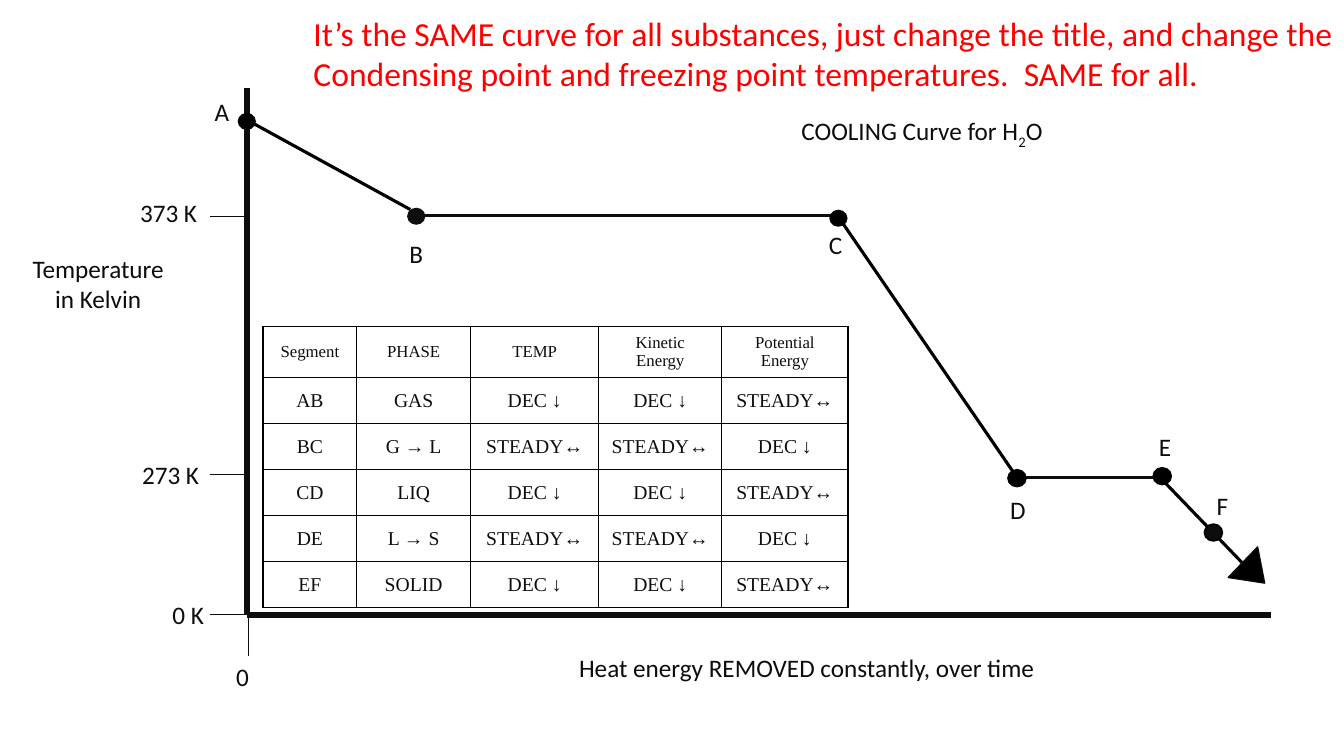
"""Build a slide with the cooling curve of water and its table of segments."""
from dataclasses import dataclass

import lxml.etree
import pptx
import pptx.dml.color
import pptx.enum.shapes
import pptx.enum.text
import pptx.oxml.ns
import pptx.util

Cm = pptx.util.Cm
Pt = pptx.util.Pt
ALIGN = pptx.enum.text.PP_ALIGN
SHAPE = pptx.enum.shapes.MSO_SHAPE

INK = pptx.dml.color.RGBColor(0x0D, 0x0D, 0x0D)
BLACK = pptx.dml.color.RGBColor(0, 0, 0)
RED = pptx.dml.color.RGBColor(0xFF, 0, 0)

AXIS_X, AXIS_TOP, AXIS_RIGHT, BASELINE = 6.22, 2.21, 32.03, 15.49
TICK_LEFT = 5.28
LABEL_WIDTH, LABEL_HEIGHT = 2.03, 1.02
DOT_WIDTH, DOT_HEIGHT = 0.46, 0.43


@dataclass(frozen=True)
class Label:
    text: str
    left: float
    top: float
    width: float = LABEL_WIDTH
    height: float = LABEL_HEIGHT
    align: ALIGN = ALIGN.CENTER
    size: float = 18
    color: pptx.dml.color.RGBColor = INK


@dataclass(frozen=True)
class Stroke:
    x1: float
    y1: float
    x2: float
    y2: float
    weight: float
    color: pptx.dml.color.RGBColor = INK


@dataclass(frozen=True)
class Point:
    name: str
    x: float
    y: float
    label_x: float
    label_top: float
    color: pptx.dml.color.RGBColor = BLACK
    outlined: bool = False


LABELS = [
    Label("Temperature in Kelvin", 0.48, 6.25, 3.99, 1.8),
    Label("Heat energy REMOVED constantly, over time", 13.89, 16.31, 12.88),
    Label("373 K", 3.28, 4.85, align=ALIGN.LEFT),
    Label("273 K", 3.33, 11.46, align=ALIGN.LEFT),
    Label("0 K", 3.73, 14.99),
    Label("0", 5.33, 16.54, 1.57),
    Label("It’s the SAME curve for all substances, just change the title, and change the "
          "Condensing point and freezing point temperatures.  SAME for all.",
          7.65, 0.2, 26.21, 2.31, ALIGN.LEFT, 24, RED),
]

AXES = [
    Stroke(AXIS_X, AXIS_TOP, AXIS_X, BASELINE, 4.5),
    Stroke(AXIS_RIGHT, BASELINE, AXIS_X, BASELINE, 4.5),
    Stroke(6.25, 16.54, 6.25, BASELINE, 0.5),
]
TICKS = [Stroke(TICK_LEFT, y, AXIS_X, y, 0.5) for y in (5.44, 11.96, BASELINE)]
SEGMENTS = [
    Stroke(AXIS_X, 3.02, 10.34, 5.28, 2.25, BLACK),
    Stroke(10.64, 5.44, 21.06, 5.44, 2.25),
    Stroke(21.18, 5.54, 25.58, 11.96, 2.25, BLACK),
    Stroke(25.86, 12.04, 29.34, 12.04, 2.25),
    Stroke(29.29, 12.09, 31.37, 14.25, 2.25, BLACK),
]
POINTS = [
    Point("A", AXIS_X, 3.06, 5.59, 2.31),
    Point("B", 10.49, 5.45, 10.49, 5.87, INK),
    Point("C", 21.13, 5.5, 21.06, 5.66),
    Point("D", 25.63, 12.05, 25.65, 12.32, outlined=True),
    Point("E", 29.29, 12.0, 29.36, 10.74, outlined=True),
    Point("F", 30.58, 13.42, 30.81, 12.22, INK, True),
]

FALLING, STEADY = "DEC ↓", "STEADY↔"
COOLING = (FALLING, FALLING, STEADY)
CHANGING = (STEADY, STEADY, FALLING)
ROWS = [
    ("Segment", "PHASE", "TEMP", "Kinetic\nEnergy", "Potential\nEnergy"),
    ("AB", "GAS", *COOLING),
    ("BC", "G → L", *CHANGING),
    ("CD", "LIQ", *COOLING),
    ("DE", "L → S", *CHANGING),
    ("EF", "SOLID", *COOLING),
]
COLUMN_WIDTHS = (2.36, 2.87, 3.23, 3.1, 3.18)
HEADER_HEIGHT, ROW_HEIGHT = 1.28, 1.16


def style(paragraph, align: ALIGN, size: float, color, font: str = "Calibri") -> None:
    paragraph.alignment = align
    paragraph.font.size = Pt(size)
    paragraph.font.name = font
    paragraph.font.color.rgb = color


def draw_label(slide, label: Label) -> None:
    box = slide.shapes.add_textbox(Cm(label.left), Cm(label.top), Cm(label.width), Cm(label.height))
    box.text_frame.word_wrap = True
    paragraph = box.text_frame.paragraphs[0]
    paragraph.text = label.text
    style(paragraph, label.align, label.size, label.color)


def draw_stroke(slide, stroke: Stroke) -> None:
    line = slide.shapes.add_connector(
        pptx.enum.shapes.MSO_CONNECTOR.STRAIGHT,
        Cm(stroke.x1), Cm(stroke.y1), Cm(stroke.x2), Cm(stroke.y2))
    line.line.width = Pt(stroke.weight)
    line.line.color.rgb = stroke.color
    lxml.etree.SubElement(line._element.spPr, pptx.oxml.ns.qn("a:effectLst"))


def draw_solid(slide, kind: SHAPE, left: float, top: float, width: float, height: float,
               fill, outline=None):
    solid = slide.shapes.add_shape(kind, Cm(left), Cm(top), Cm(width), Cm(height))
    solid.shadow.inherit = False
    solid.fill.solid()
    solid.fill.fore_color.rgb = fill
    if outline is None:
        solid.line.fill.background()
    else:
        solid.line.color.rgb = outline
        solid.line.width = Pt(1)
    return solid


def draw_point(slide, point: Point) -> None:
    draw_solid(slide, SHAPE.OVAL, point.x - DOT_WIDTH / 2, point.y - DOT_HEIGHT / 2,
               DOT_WIDTH, DOT_HEIGHT, point.color, BLACK if point.outlined else None)
    draw_label(slide, Label(point.name, point.label_x - LABEL_WIDTH / 2, point.label_top))


def draw_title(slide) -> None:
    title = slide.shapes.title
    title.left, title.top, title.width, title.height = Cm(19.69), Cm(2.79), Cm(7.09), Cm(1.02)
    title.text_frame.auto_size = pptx.enum.text.MSO_AUTO_SIZE.NONE
    title.text_frame.vertical_anchor = pptx.enum.text.MSO_ANCHOR.TOP
    paragraph = title.text_frame.paragraphs[0]
    for text in ("COOLING Curve for H", "2", "O"):
        run = paragraph.add_run()
        run.text = text
        if text == "2":
            run._r.get_or_add_rPr().set("baseline", "-25000")
    style(paragraph, ALIGN.CENTER, 18, INK)


def add_borders(cell) -> None:
    properties = cell._tc.get_or_add_tcPr()
    for side in ("lnL", "lnR", "lnT", "lnB"):
        border = lxml.etree.SubElement(properties, pptx.oxml.ns.qn(f"a:{side}"), w=str(Pt(1)))
        fill = lxml.etree.SubElement(border, pptx.oxml.ns.qn("a:solidFill"))
        lxml.etree.SubElement(fill, pptx.oxml.ns.qn("a:srgbClr"), val=str(BLACK))


def draw_table(slide) -> None:
    heights = [HEADER_HEIGHT] + [ROW_HEIGHT] * (len(ROWS) - 1)
    table = slide.shapes.add_table(len(ROWS), len(COLUMN_WIDTHS), Cm(6.63), Cm(8.23),
                                   Cm(sum(COLUMN_WIDTHS)), Cm(sum(heights))).table
    table.first_row = table.horz_banding = False
    for column, width in zip(table.columns, COLUMN_WIDTHS):
        column.width = Cm(width)
    for r, (texts, height) in enumerate(zip(ROWS, heights)):
        table.rows[r].height = Cm(height)
        for c, text in enumerate(texts):
            cell = table.cell(r, c)
            cell.vertical_anchor = pptx.enum.text.MSO_ANCHOR.MIDDLE
            cell.margin_left = cell.margin_right = Cm(0.15)
            add_borders(cell)
            cell.fill.background()
            paragraph = cell.text_frame.paragraphs[0]
            paragraph.text = text.replace("\n", "\v")
            style(paragraph, ALIGN.CENTER, 14 if r else 12, INK, "Times New Roman")


def main() -> None:
    deck = pptx.Presentation()
    deck.slide_width, deck.slide_height = Cm(33.87), Cm(19.05)
    slide = deck.slides.add_slide(deck.slide_layouts[5])
    draw_title(slide)
    for stroke in AXES + TICKS:
        draw_stroke(slide, stroke)
    for label in LABELS:
        draw_label(slide, label)
    draw_table(slide)
    for segment in SEGMENTS:
        draw_stroke(slide, segment)
    for point in POINTS:
        draw_point(slide, point)
    arrow_tip = draw_solid(slide, SHAPE.ISOSCELES_TRIANGLE, 31.06, 14.05, 1.07, 0.76, BLACK, INK)
    arrow_tip.rotation = 133.9
    deck.save("out.pptx")


if __name__ == "__main__":
    main()
